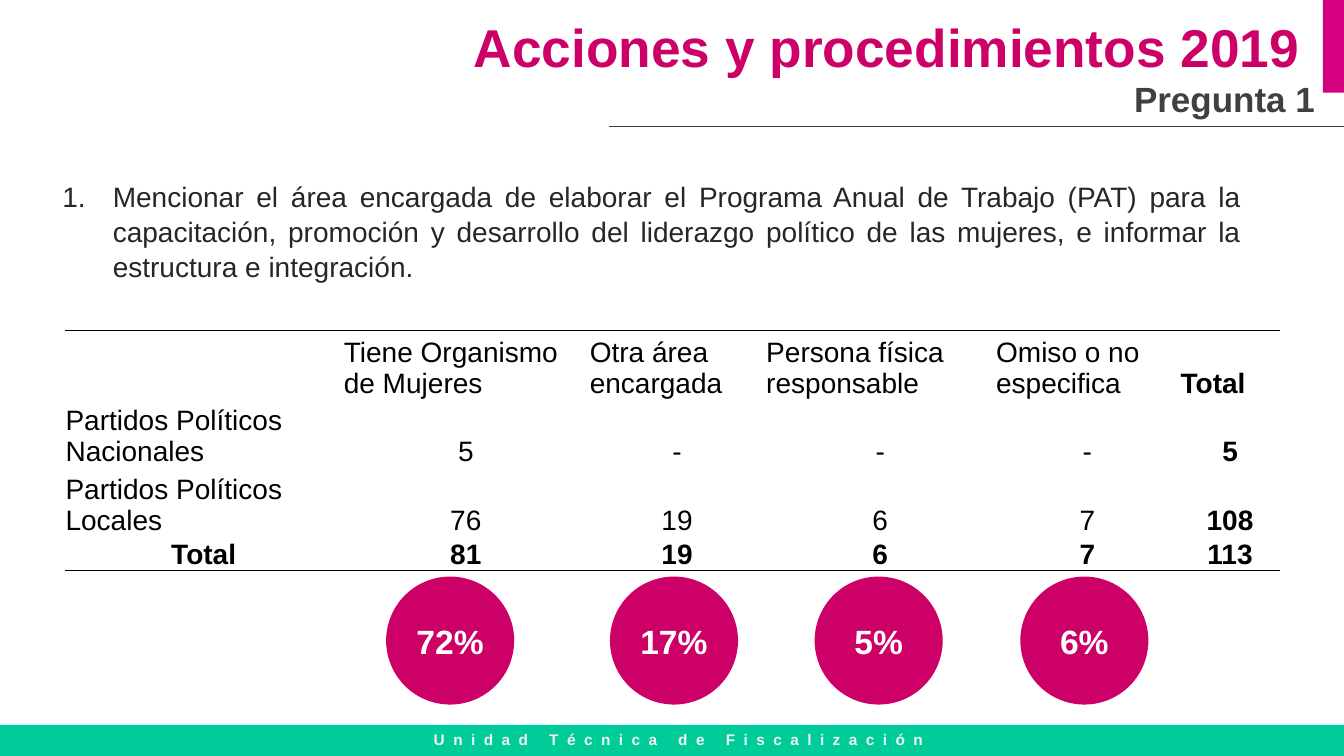
from lxml import etree
from pptx import Presentation
from pptx.dml.color import RGBColor
from pptx.enum.shapes import MSO_CONNECTOR, MSO_SHAPE
from pptx.enum.text import MSO_ANCHOR, MSO_AUTO_SIZE, PP_ALIGN
from pptx.oxml import parse_xml
from pptx.oxml.ns import nsdecls, qn
from pptx.util import Inches, Pt

LEFT, CENTER, RIGHT, JUSTIFY = PP_ALIGN.LEFT, PP_ALIGN.CENTER, PP_ALIGN.RIGHT, PP_ALIGN.JUSTIFY
TOP, MIDDLE, BOTTOM = MSO_ANCHOR.TOP, MSO_ANCHOR.MIDDLE, MSO_ANCHOR.BOTTOM
NO_AUTOFIT = MSO_AUTO_SIZE.NONE
RECT, OVAL = MSO_SHAPE.RECTANGLE, MSO_SHAPE.OVAL
STRAIGHT = MSO_CONNECTOR.STRAIGHT
TITLE_ONLY = 5
NO_TABLE_STYLE = "{2D5ABB26-0587-4C30-8999-92F81FD0307C}"

PINK, MAGENTA, GREEN = "CC0066", "D5007F", "00CC99"
BLACK, DARK, TEXT, PALE, WHITE = "000000", "404040", "262626", "F2F2F2", "FFFFFF"

QUESTION = (
    "Mencionar el área encargada de elaborar el Programa Anual de Trabajo (PAT) "
    "para la capacitación, promoción y desarrollo del liderazgo político de las "
    "mujeres, e informar la estructura e integración."
)
COLUMNS = [2.76, 2.44, 1.75, 2.28, 1.83, 1]
ROWS = [0.68, 0.68, 0.68, 0.34]
DATA = [
    ["", "Tiene Organismo de Mujeres", "Otra área encargada",
     "Persona física responsable", "Omiso o no especifica", "Total"],
    ["Partidos Políticos Nacionales", "5", "-", "-", "-", "5"],
    ["Partidos Políticos Locales", "76", "19", "6", "7", "108"],
    ["Total", "81", "19", "6", "7", "113"],
]
SHARES = [(3.83, "72%"), (6.05, "17%"), (8.08, "5%"), (10.12, "6%")]


def rgb(value):
    return RGBColor.from_string(value)


def set_attrs(target, values):
    for name, value in values.items():
        setattr(target, name, value)


def write(p, text, size, color, bold=False, align=LEFT):
    p.alignment = align
    r = p.add_run()
    r.text = text
    set_attrs(r.font, {"name": "Arial", "size": Pt(size), "bold": bold})
    r.font.color.rgb = rgb(color)
    return r


def add_shape(s, kind, box, color):
    sp = s.shapes.add_shape(kind, *map(Inches, box))
    sp.shadow.inherit = False
    sp.fill.solid()
    sp.fill.fore_color.rgb = rgb(color)
    sp.line.fill.background()
    return sp


def add_text(s, box, anchor):
    tf = s.shapes.add_textbox(*map(Inches, box)).text_frame
    set_attrs(tf, {"word_wrap": True, "vertical_anchor": anchor})
    return tf


def add_footer(s, box):
    add_shape(s, RECT, box, GREEN)
    x, y, w, h = box
    tf = add_text(s, (x + 0.13, y, w - 0.13, h - 0.03), MIDDLE)
    r = write(tf.paragraphs[0], "Unidad Técnica de Fiscalización", 11, PALE, True, CENTER)
    r.font._element.set("spc", "600")


def add_header(s, box):
    x, y, w, h = box
    add_shape(s, RECT, (13.12, 0, 0.21, 0.92), MAGENTA)
    rule = s.shapes.add_connector(
        STRAIGHT, Inches(6.04), Inches(y + h), Inches(13.33), Inches(y + h))
    rule.line.color.rgb = rgb(DARK)
    rule.line.width = Pt(0.5)
    etree.SubElement(rule._element.spPr, qn("a:effectLst"))

    title = s.shapes.title
    set_attrs(title, dict(zip(("left", "top", "width", "height"), map(Inches, box))))
    tf = title.text_frame
    set_attrs(tf, {"word_wrap": True, "vertical_anchor": TOP, "auto_size": NO_AUTOFIT})
    write(tf.paragraphs[0], "Acciones y procedimientos 2019 ", 38, PINK, True, RIGHT)
    write(tf.add_paragraph(), "Pregunta 1", 25, DARK, True, RIGHT)


def add_question(s, box):
    p = add_text(s, box, TOP).paragraphs[0]
    p.line_spacing = 1.04
    pPr = p._p.get_or_add_pPr()
    pPr.set("marL", str(Inches(0.5)))
    pPr.set("indent", str(-Inches(0.5)))
    etree.SubElement(pPr, qn("a:buAutoNum"), type="arabicPeriod")
    write(p, QUESTION, 20, TEXT, align=JUSTIFY)


def add_border(cell, side):
    line = parse_xml(
        f'<a:{side} {nsdecls("a")} w="12700"><a:solidFill>'
        f'<a:srgbClr val="{BLACK}"/></a:solidFill></a:{side}>')
    cell._tc.get_or_add_tcPr().insert(0, line)


def add_results(s, box):
    frame = s.shapes.add_table(len(ROWS), len(COLUMNS), *map(Inches, box))
    table = frame.table
    set_attrs(table, {"first_row": False, "horz_banding": False})
    table._tbl.tblPr.find(qn("a:tableStyleId")).text = NO_TABLE_STYLE
    for column, width in zip(table.columns, COLUMNS):
        column.width = Inches(width)
    for row, height in zip(table.rows, ROWS):
        row.height = Inches(height)

    last_row, last_col = len(ROWS) - 1, len(COLUMNS) - 1
    margins = {"margin_left": Inches(0.01), "margin_right": Inches(0.01),
               "margin_top": Inches(0.01), "margin_bottom": 0}
    for i, values in enumerate(DATA):
        for j, value in enumerate(values):
            cell = table.cell(i, j)
            cell.fill.background()
            set_attrs(cell, {"vertical_anchor": BOTTOM, **margins})
            if value:
                bold = i == last_row or j == last_col
                centered = i == last_row or (i > 0 and j > 0)
                write(cell.text_frame.paragraphs[0], value, 20, BLACK, bold,
                      CENTER if centered else LEFT)
            if i == 0:
                add_border(cell, "lnT")
            if i == last_row:
                add_border(cell, "lnB")


def add_shares(s, top, size):
    for left, share in SHARES:
        tf = add_shape(s, OVAL, (left, top, size, size), PINK).text_frame
        set_attrs(tf, {"word_wrap": True, "vertical_anchor": MIDDLE,
                       "margin_left": 0, "margin_right": 0})
        write(tf.paragraphs[0], share, 24, WHITE, True, CENTER)


def main():
    prs = Presentation()
    set_attrs(prs, {"slide_width": Inches(13.33), "slide_height": Inches(7.5)})
    s = prs.slides.add_slide(prs.slide_layouts[TITLE_ONLY])
    add_footer(s, (0, 7.19, 13.33, 0.32))
    add_header(s, (4.23, 0.09, 8.91, 1.16))
    add_question(s, (0.52, 1.72, 11.89, 1.26))
    add_results(s, (0.64, 3.28, 12.06, 2.38))
    add_shares(s, 5.72, 1.27)
    prs.save("out.pptx")


if __name__ == "__main__":
    main()
